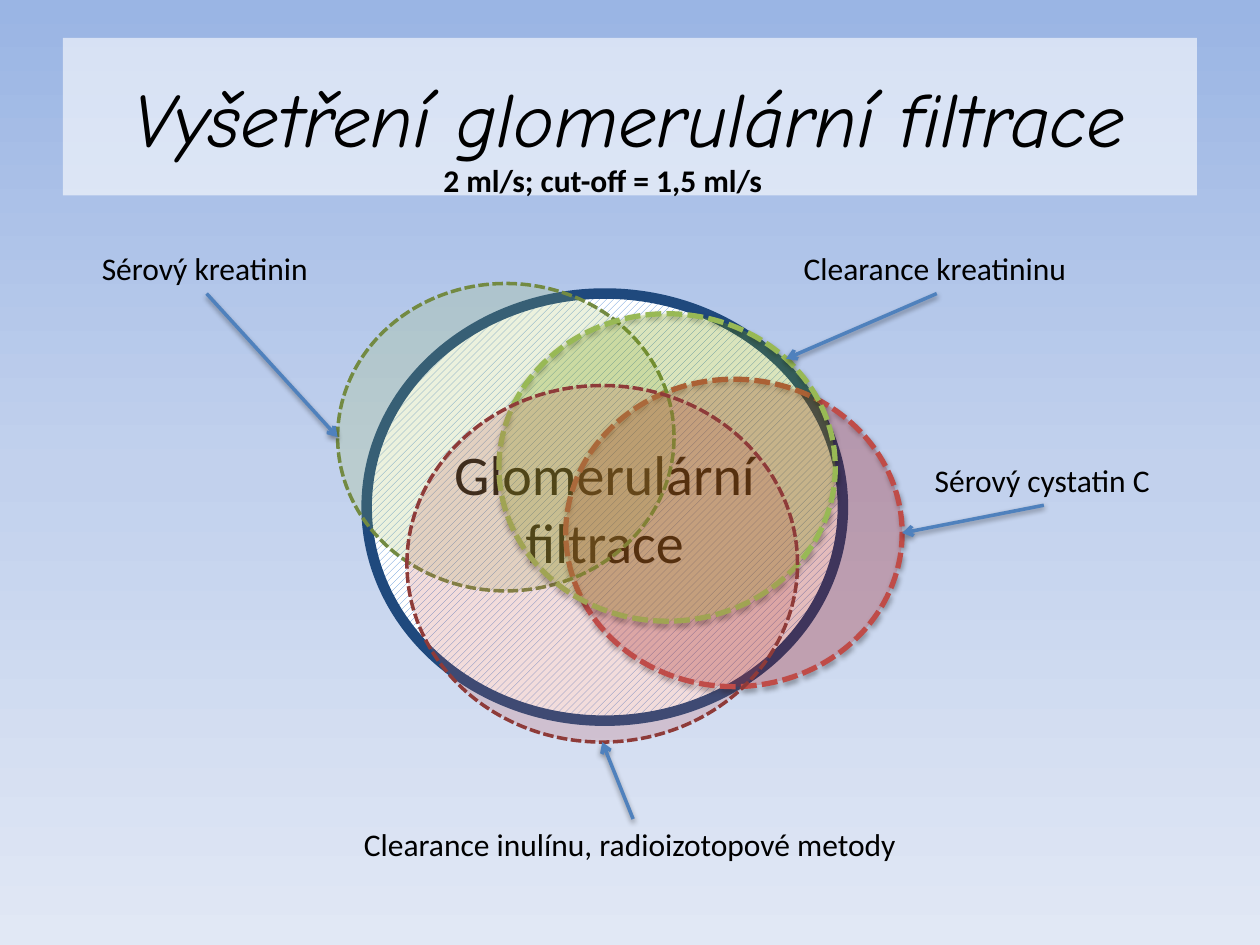
from copy import deepcopy
from dataclasses import dataclass

from lxml.etree import SubElement as Sub
from pptx import Presentation
from pptx.dml.color import RGBColor as Rgb
from pptx.enum.dml import MSO_LINE as Dash, MSO_PATTERN as Pat
from pptx.enum.shapes import MSO_CONNECTOR as Conn, MSO_SHAPE as Kind
from pptx.enum.text import MSO_ANCHOR as Anchor, MSO_AUTO_SIZE as Auto, PP_ALIGN as Align
from pptx.oxml.ns import qn
from pptx.util import Inches, Pt


@dataclass(frozen=True)
class Theme:
    sky: tuple = ("9AB5E4", "C2D1ED", "E1E8F5")
    ink: str = "000000"
    white: str = "FFFFFF"
    navy: str = "1F497D"
    hatch: str = "558ED5"
    arrow: str = "4F81BD"
    face: str = "Calibri"
    script: str = "Comic Neue"
    head: int = 44
    core: int = 32
    label: int = 18


T = Theme()
TOP, LEFT, BOTTOM, RIGHT = (0.5, 0), (0, 0.5), (0.5, 1), (1, 0.5)
DIAG = 0.5 + 0.5 ** 1.5  # share of an ellipse's box reached at 45 degrees
CORNER = (DIAG, 1 - DIAG)
SMALL = (2.67, 2.44)

# name: box, fill, line colour, line width, has shadow
RINGS = {
    "cystatin": ((4.49, 3.01, *SMALL), "CC0000", "BF4C48", 3, True),
    "serum": ((2.68, 2.25, *SMALL), "9BBB59", "738A42", 2, False),
    "clear": ((3.96, 2.49, *SMALL), "99CC00", "98B955", 3, True),
    "inulin": ((3.23, 3.06, 3.1, 2.83), "C0504D", "8E3B39", 2, False),
}
# text, box, side the arrow leaves from, ring, place on the ring
LABELS = (
    ("Sérový kreatinin", (0.71, 1.93, 1.86, 0.4), 2, "serum", LEFT),
    ("Clearance kreatininu", (6.28, 1.93, 2.31, 0.4), 2, "clear", CORNER),
    ("Clearance inulínu, radioizotopové metody", (2.79, 6.5, 4.47, 0.4), 0, "inulin", BOTTOM),
    ("Sérový cystatin C", (7.32, 3.61, 1.93, 0.4), 2, "cystatin", RIGHT),
)


def inch(box):
    return [Inches(v) for v in box]


def paint(fill, color, alpha):
    fill.solid()
    fill.fore_color.rgb = Rgb.from_string(color)
    tint = fill._xPr.find(f"{qn('a:solidFill')}/{qn('a:srgbClr')}")
    Sub(tint, qn("a:alpha"), val=str(alpha * 1000))


def stroke(line, color, width):
    line.color.rgb = Rgb.from_string(color)
    line.width = Pt(width)


def shade(props):
    """Give a shape's properties a soft shadow straight below."""
    fx = props.find(qn("a:effectLst"))
    if fx is None:
        fx = Sub(props, qn("a:effectLst"))
    drop = Sub(fx, qn("a:outerShdw"), blurRad="40000", dist="20000",
               dir="5400000", rotWithShape="0")
    tint = Sub(drop, qn("a:srgbClr"), val=T.ink)
    Sub(tint, qn("a:alpha"), val="38000")


def write(shape, text, size, face=T.face, align=Align.CENTER, bold=False, italic=False):
    shape.text_frame.text = text
    para = shape.text_frame.paragraphs[0]
    para.alignment = align
    font = para.runs[0].font
    font.name, font.size = face, Pt(size)
    font.bold, font.italic = bold, italic
    font.color.rgb = Rgb.from_string(T.ink)


def sky(slide):
    fill = slide.background.fill
    fill.gradient()
    fill.gradient_angle = 270
    stops = slide.element.find(f".//{qn('a:gsLst')}")
    stops.insert(1, deepcopy(stops[0]))
    stops[1].set("pos", "50000")
    for stop, color in zip(fill.gradient_stops, T.sky):
        stop.color.rgb = Rgb.from_string(color)


def title(slide, box, text):
    shape = slide.shapes.add_textbox(*inch(box))
    paint(shape.fill, T.white, 60)
    shape.text_frame.word_wrap = True
    shape.text_frame.vertical_anchor = Anchor.MIDDLE
    write(shape, text, T.head, T.script, italic=True)


def oval(slide, box):
    shape = slide.shapes.add_shape(Kind.OVAL, *inch(box))
    shape.shadow.inherit = False
    return shape


def core(slide, box, text):
    shape = oval(slide, box)
    shape.fill.patterned()
    shape.fill.pattern = Pat.WIDE_UPWARD_DIAGONAL
    shape.fill.fore_color.rgb = Rgb.from_string(T.hatch)
    shape.fill.back_color.rgb = Rgb.from_string(T.white)
    stroke(shape.line, T.navy, 6)
    shape.text_frame.vertical_anchor = Anchor.MIDDLE
    write(shape, text, T.core)


def ring(slide, box, color, edge, width, lifted):
    shape = oval(slide, box)
    paint(shape.fill, color, 20)
    stroke(shape.line, edge, width)
    shape.line.dash_style = Dash.SQUARE_DOT
    if lifted:
        shade(shape.element.spPr)


def label(slide, box, text, bold=False):
    shape = slide.shapes.add_textbox(*inch(box))
    frame = shape.text_frame
    frame.word_wrap = False
    frame.auto_size = Auto.SHAPE_TO_FIT_TEXT
    write(shape, text, T.label, align=Align.LEFT, bold=bold)
    return shape


def arrow(slide, start, side, box, spot):
    """Point from one side of a label to a spot on a ring's box."""
    left, top, width, height = box
    end = inch((left + width * spot[0], top + height * spot[1]))
    link = slide.shapes.add_connector(Conn.STRAIGHT, 0, 0, *end)
    link.begin_connect(start, side)
    stroke(link.line, T.arrow, 2)
    props = link.element.spPr
    Sub(props.find(qn("a:ln")), qn("a:tailEnd"), type="arrow")
    shade(props)


def main():
    deck = Presentation()
    deck.slide_width, deck.slide_height = inch((10, 7.5))
    slide = deck.slides.add_slide(deck.slide_layouts[6])
    sky(slide)
    title(slide, (0.5, 0.3, 9, 1.25), "Vyšetření glomerulární filtrace")
    core(slide, (2.91, 2.33, 3.78, 3.39), "Glomerulární filtrace")
    for args in RINGS.values():
        ring(slide, *args)
    for text, box, side, name, spot in LABELS:
        note = label(slide, box, text)
        arrow(slide, note, side, RINGS[name][0], spot)
    label(slide, (3.42, 1.23, 2.77, 0.4), "2 ml/s; cut-off = 1,5 ml/s", bold=True)
    deck.save("out.pptx")


if __name__ == "__main__":
    main()
